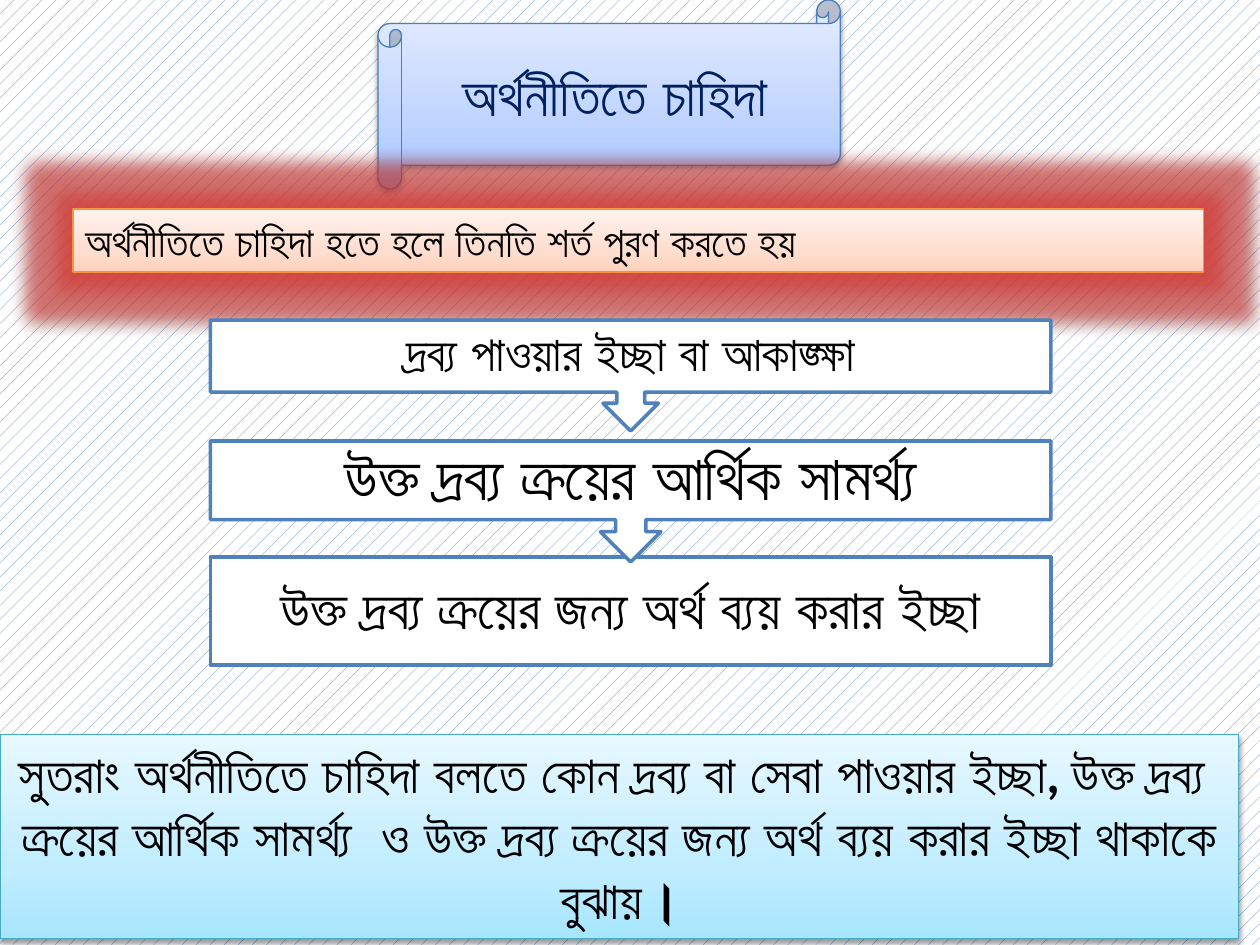
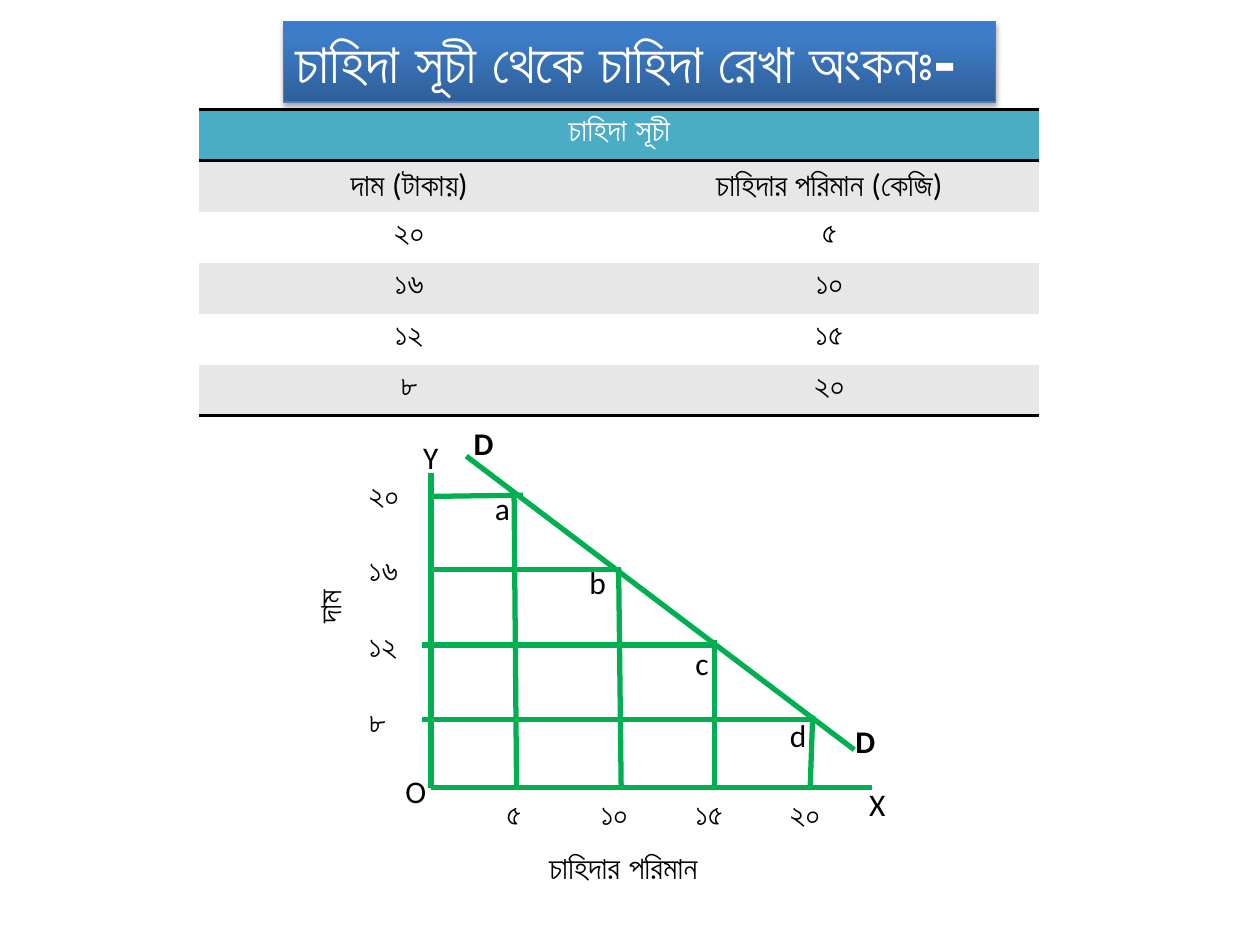
"""Build two slides on demand in economics: its conditions and its curve."""
from lxml import etree
from pptx import Presentation
from pptx import util as u
from pptx.dml import color
from pptx.enum import dml, shapes, text
from pptx.oxml import parse_xml
from pptx.oxml.ns import nsdecls, qn

COLORS = {
    "black": "000000", "white": "FFFFFF", "navy": "002060", "blue": "4F81BD",
    "green": "00B050", "teal": "4BACC6", "gray": "E7E7E7", "glow": "D93B37",
}
GRADIENTS = {
    "scroll": ("4B7EBC", [(0, "A4C4FF"), (35, "BFD4FF"), (100, "E6EEFF")]),
    "orange": ("F69240", [(0, "FFD2BD"), (35, "FFDED0"), (100, "FFF2ED")]),
    "aqua": ("46AAC5", [(0, "A7E6FF"), (35, "C1EDFF"), (100, "E7F8FF")]),
    "title": ("4B7EBC", [(0, "2F5F99"), (80, "3D7CC7"), (100, "3A7CCB")]),
}
RGB = {name: color.RGBColor.from_string(value) for name, value in COLORS.items()}
LEFT, CENTER = text.PP_ALIGN.LEFT, text.PP_ALIGN.CENTER
TOP, MIDDLE = text.MSO_ANCHOR.TOP, text.MSO_ANCHOR.MIDDLE
GROW, FIXED = text.MSO_AUTO_SIZE.SHAPE_TO_FIT_TEXT, text.MSO_AUTO_SIZE.NONE
RECTANGLE = shapes.MSO_SHAPE.RECTANGLE


def write(box, lines, size=18, ink="black", bold=False, face="Calibri",
          align=LEFT, **frame_format):
    """Fill the text frame of a shape or table cell."""
    frame = box.text_frame
    for name, value in frame_format.items():
        setattr(frame, name, value)
    for number, line in enumerate(lines):
        para = frame.paragraphs[0] if number == 0 else frame.add_paragraph()
        para.alignment = align
        span = para.add_run()
        span.text = line
        span.font.color.rgb = RGB[ink]
        for name, value in {"size": u.Pt(size), "bold": bold, "name": face}.items():
            setattr(span.font, name, value)


def add_panel(page, kind, place, scheme, opacity=38, distance=20000):
    """Add a shape with a gradient fill and a soft shadow."""
    panel = page.shapes.add_shape(kind, *map(u.Inches, place))
    edge, stops = GRADIENTS[scheme]
    panel.fill.gradient()
    panel.fill.gradient_angle = 90
    stop_list = panel._element.spPr.find(".//" + qn("a:gsLst"))
    stop_list.clear()
    for position, value in stops:
        stop = etree.SubElement(stop_list, qn("a:gs"), pos=str(position * 1000))
        etree.SubElement(stop, qn("a:srgbClr"), val=value)
    panel.line.color.rgb = color.RGBColor.from_string(edge)
    panel.line.width = u.Pt(0.75)
    panel.shadow.inherit = False
    panel._element.spPr.find(qn("a:effectLst")).append(parse_xml(
        f'<a:outerShdw {nsdecls("a")} blurRad="40000" dist="{distance}" dir="5400000" '
        f'rotWithShape="0"><a:srgbClr val="{COLORS["black"]}">'
        f'<a:alpha val="{opacity * 1000}"/></a:srgbClr></a:outerShdw>'))
    return panel


deck = Presentation()
deck.slide_width, deck.slide_height = u.Inches(10), u.Inches(7.5)
blank = deck.slide_layouts[6]

page = deck.slides.add_slide(blank)
backdrop = page.background.fill
backdrop.patterned()
backdrop.pattern = dml.MSO_PATTERN.PERCENT_10
backdrop.fore_color.rgb = RGB["blue"]
backdrop.back_color.rgb = RGB["white"]

scroll = add_panel(page, shapes.MSO_SHAPE.HORIZONTAL_SCROLL, (3, 0, 3.67, 1.5), "scroll")
write(scroll, ["অর্থনীতিতে চাহিদা"], 32, "navy", True, align=CENTER,
      vertical_anchor=MIDDLE, word_wrap=True)

condition = add_panel(page, RECTANGLE, (0.58, 1.66, 8.97, 0.5), "orange")
condition._element.spPr.find(qn("a:effectLst")).insert(0, parse_xml(
    f'<a:glow {nsdecls("a")} rad="228600"><a:srgbClr val="{COLORS["glow"]}">'
    '<a:alpha val="60000"/></a:srgbClr></a:glow>'))
write(condition, ["অর্থনীতিতে চাহিদা হতে হলে তিনতি শর্ত পুরণ করতে হয়"], 24, bold=True,
      vertical_anchor=TOP, word_wrap=False, auto_size=GROW)

callout = shapes.MSO_SHAPE.UP_ARROW_CALLOUT
steps = [
    (RECTANGLE, 4.42, 0.86, 0.86, 0.25, 32, "উক্ত দ্রব্য ক্রয়ের জন্য অর্থ ব্যয় করার ইচ্ছা"),
    (callout, 3.5, 0.96, 0.62, 0.28, 36, "উক্ত দ্রব্য ক্রয়ের আর্থিক সামর্থ্য"),
    (callout, 2.54, 0.88, 0.57, 0.22, 28, "দ্রব্য পাওয়ার ইচ্ছা বা আকাঙ্ক্ষা"),
]
for kind, top, height, text_height, inset, size, words in steps:
    step = page.shapes.add_shape(kind, *map(u.Inches, (1.67, top, 6.67, height)))
    step.rotation = 180 if kind == callout else 0
    step.fill.solid()
    step.fill.fore_color.rgb = RGB["white"]
    step.line.color.rgb = RGB["blue"]
    step.line.width = u.Pt(2)
    step.shadow.inherit = False
    box = page.shapes.add_textbox(*map(u.Inches, (1.67, top, 6.67, text_height)))
    margins = {f"margin_{side}": u.Inches(inset) for side in ("left", "top", "right", "bottom")}
    write(box, [words], size, bold=True, align=CENTER, vertical_anchor=MIDDLE,
          word_wrap=True, auto_size=FIXED, **margins)
    box.text_frame.paragraphs[0].line_spacing = 0.9

summary = add_panel(page, RECTANGLE, (0, 5.83, 9.83, 1.62), "aqua")
write(summary, [
    "সুতরাং অর্থনীতিতে চাহিদা বলতে কোন দ্রব্য বা সেবা পাওয়ার ইচ্ছা, উক্ত দ্রব্য ",
    "ক্রয়ের আর্থিক সামর্থ্য  ও উক্ত দ্রব্য ক্রয়ের জন্য অর্থ ব্যয় করার ইচ্ছা থাকাকে বুঝায়।",
], 30, bold=True, align=CENTER, vertical_anchor=TOP, word_wrap=True, auto_size=GROW)

page = deck.slides.add_slide(blank)
page.background.fill.solid()
page.background.fill.fore_color.rgb = RGB["white"]
title = add_panel(page, RECTANGLE, (2.25, 0.17, 5.65, 0.64), "title", 35, 23000)
write(title, ["চাহিদা সূচী থেকে চাহিদা রেখা অংকনঃ-"], 32, "white", True, "DejaVu Sans",
      vertical_anchor=TOP, word_wrap=False, auto_size=GROW)

schedule = [
    ("চাহিদা সূচী", ""), ("দাম (টাকায়)", "চাহিদার পরিমান (কেজি)"),
    ("২০", "৫"), ("১৬", "১০"), ("১২", "১৫"), ("৮", "২০"),
]
table = page.shapes.add_table(6, 2, *map(u.Inches, (1.58, 0.87, 6.67, 2.43))).table
table._tbl.tblPr.find(qn("a:tableStyleId")).text = "{2D5ABB26-0587-4C30-8999-92F81FD0307C}"
table.cell(0, 0).merge(table.cell(0, 1))
rules = {0: ("lnT", "lnB"), 5: ("lnB",)}
for row, values in enumerate(schedule):
    for column, value in enumerate(values):
        cell = table.cell(row, column)
        cell.fill.solid()
        cell.fill.fore_color.rgb = RGB["teal" if row == 0 else "gray" if row % 2 else "white"]
        for position, side in enumerate(rules.get(row, ())):
            cell._tc.get_or_add_tcPr().insert(position, parse_xml(
                f'<a:{side} {nsdecls("a")} w="25400"><a:solidFill>'
                f'<a:srgbClr val="{COLORS["black"]}"/></a:solidFill></a:{side}>'))
        if value:
            write(cell, [value], ink="black" if row else "white", bold=row == 0, align=CENTER)

graph_lines = [
    (3.42, 6.25, 6.92, 6.25), (3.42, 6.25, 3.42, 3.75),
    (3.35, 5.71, 6.47, 5.71), (6.45, 5.68, 6.43, 6.25),
    (3.35, 5.12, 5.69, 5.12), (5.67, 5.08, 5.67, 6.25),
    (3.44, 4.52, 4.93, 4.52), (4.93, 6.25, 4.91, 4.51),
    (4.1, 6.25, 4.08, 3.92), (3.42, 3.94, 4.15, 3.93),
    (3.7, 3.62, 6.78, 5.95),
]
for ends in graph_lines:
    line = page.shapes.add_connector(shapes.MSO_CONNECTOR.STRAIGHT, *map(u.Inches, ends))
    line.line.color.rgb = RGB["green"]
    line.line.width = u.Pt(3)
    etree.SubElement(line._element.spPr, qn("a:effectLst"))

labels = [
    ("O", 3.12, 6.08, 0.37, False, False), ("X", 6.8, 6.18, 0.33, False, False),
    ("Y", 3.26, 3.43, 0.32, False, False),
    ("চাহিদার পরিমান", 4.26, 6.68, 1.91, True, False),
    ("D", 3.66, 3.32, 0.58, True, True), ("D", 6.69, 5.68, 0.58, True, True),
]
widths = {"৫": 0.36, "৮": 0.38, "১০": 0.52, "১২": 0.51, "১৫": 0.51, "১৬": 0.52, "২০": 0.54}
for number, (price, quantity) in enumerate(schedule[2:]):
    labels.append((price, 2.83, 3.72 + 0.6 * number, widths[price], False, False))
    labels.append((quantity, 3.92 + 0.75 * number, 6.25, widths[quantity], False, False))
for name, left, top in zip("abcd", (3.83, 4.58, 5.42, 6.17), (3.83, 4.42, 5.06, 5.63)):
    labels.append((name, left, top, 0.25, False, True))
for words, left, top, width, bold, wrap in labels:
    box = page.shapes.add_textbox(*map(u.Inches, (left, top, width, 0.4)))
    write(box, [words], bold=bold, word_wrap=wrap, auto_size=GROW)

price_axis = page.shapes.add_textbox(*map(u.Inches, (2.41, 4.48, 0.5, 0.57)))
write(price_axis, ["দাম"], bold=True, word_wrap=False, auto_size=GROW)
price_axis.text_frame._txBody.bodyPr.set("vert", "vert270")

deck.save("out.pptx")
